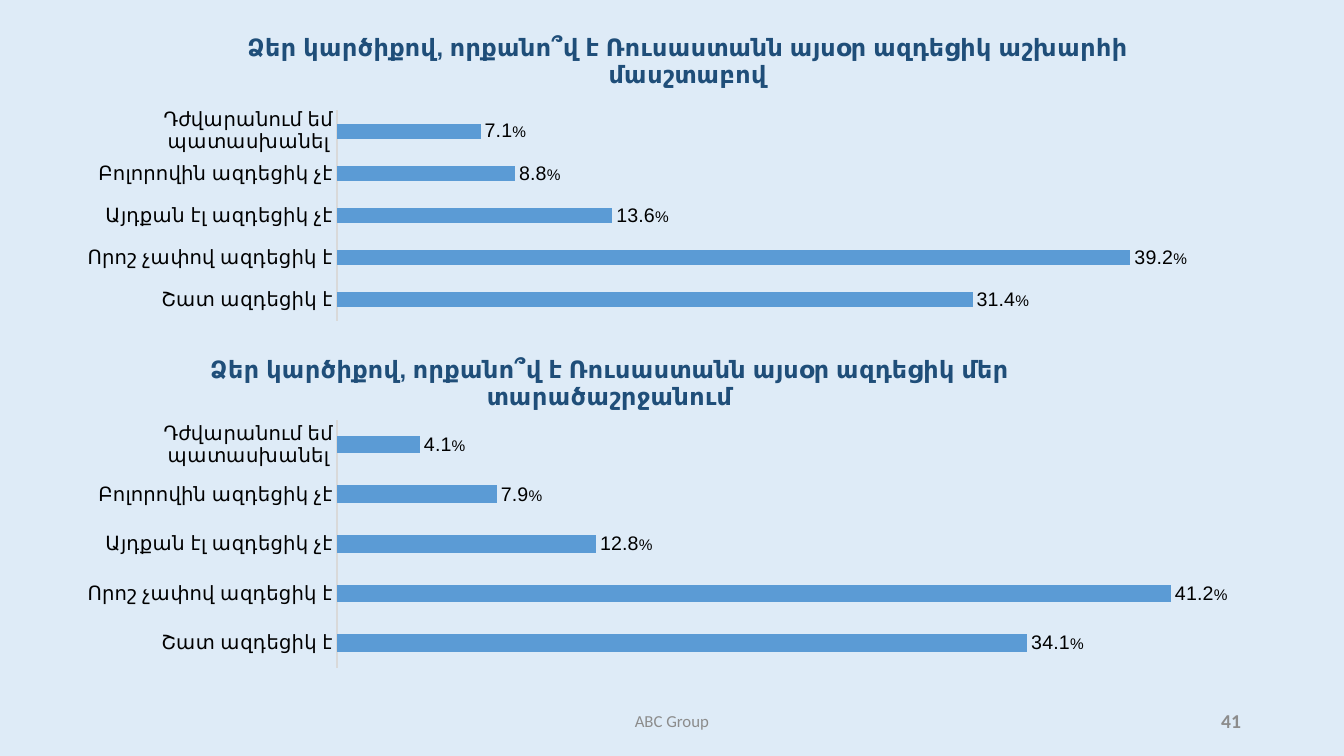
from lxml import etree
from pptx import Presentation
from pptx.chart.data import CategoryChartData
from pptx.dml.color import RGBColor
from pptx.enum.chart import XL_CHART_TYPE, XL_LABEL_POSITION, XL_TICK_LABEL_POSITION, XL_TICK_MARK
from pptx.enum.text import MSO_ANCHOR, PP_ALIGN
from pptx.oxml.ns import qn
from pptx.util import Emu, Pt

BAR = XL_CHART_TYPE.BAR_CLUSTERED
OUTSIDE_END = XL_LABEL_POSITION.OUTSIDE_END
NEXT_TO_AXIS = XL_TICK_LABEL_POSITION.NEXT_TO_AXIS
NO_TICK = XL_TICK_MARK.NONE
MIDDLE = MSO_ANCHOR.MIDDLE
CENTER, RIGHT = PP_ALIGN.CENTER, PP_ALIGN.RIGHT

PX = 9144000 / 1008  # EMU per px at 100.8 px to the inch
PALE_BLUE = RGBColor(0xDE, 0xEB, 0xF7)
BLUE = RGBColor(0x5B, 0x9B, 0xD5)
NAVY = RGBColor(0x1F, 0x4E, 0x79)
BLACK = RGBColor(0, 0, 0)
GREY = RGBColor(0x8C, 0x8C, 0x8C)
LIGHT_GREY = RGBColor(0xD9, 0xD9, 0xD9)

ONE_DECIMAL = "###0.0"
ANSWERS = ["Շատ ազդեցիկ է", "Որոշ չափով ազդեցիկ է", "Այդքան էլ ազդեցիկ չէ",
           "Բոլորովին ազդեցիկ չէ", "Դժվարանում եմ պատասխանել"]
QUESTION = "Ձեր կարծիքով, որքանո՞վ է Ռուսաստանն այսօր ազդեցիկ "


def px(n):
    return Emu(round(n * PX))


def style(font, size, color, name="Arial", bold=False):
    font.size, font.name, font.bold = Pt(size), name, bold
    font.color.rgb = color


def set_layout(parent, index, **values):
    """Place a chart part by fractions of the chart's box."""
    old = parent.find(qn("c:layout"))
    if old is not None:
        parent.remove(old)
    layout = etree.Element(qn("c:layout"))
    manual = etree.SubElement(layout, qn("c:manualLayout"))
    for tag, value in values.items():
        etree.SubElement(manual, qn("c:" + tag)).set("val", str(value))
    parent.insert(index, layout)


def add_question_chart(slide, box, title, title_at, plot, values):
    """Bar chart in box; title_at and plot are px offsets from its corner."""
    x, y, w, h = box
    data = CategoryChartData(number_format=ONE_DECIMAL)
    data.categories = ANSWERS
    data.add_series("Series 1", values)
    chart = slide.shapes.add_chart(BAR, px(x), px(y), px(w), px(h), data).chart
    chart.has_legend = False
    style(chart.font, 14, BLACK)

    # Title
    p = chart.chart_title.text_frame.paragraphs[0]
    r = p.add_run()
    r.text = title
    style(r.font, 17, NAVY, bold=True)
    chart.chart_title.include_in_layout = False
    set_layout(chart.chart_title._element, 1, xMode="edge", yMode="edge",
               x=round(title_at[0] / w, 4), y=round(title_at[1] / h, 4))

    # Plot area and axes
    plot_x, plot_y, plot_w, plot_h = plot
    set_layout(chart._chartSpace.chart.plotArea, 0, layoutTarget="inner",
               xMode="edge", yMode="edge",
               x=round(plot_x / w, 4), y=round(plot_y / h, 4),
               w=round(plot_w / w, 4), h=round(plot_h / h, 4))
    cat = chart.category_axis
    cat.major_tick_mark = cat.minor_tick_mark = NO_TICK
    cat.tick_label_position = NEXT_TO_AXIS
    cat.format.line.color.rgb = LIGHT_GREY
    cat.format.line.width = Pt(0.75)
    style(cat.tick_labels.font, 14, BLACK)
    val = chart.value_axis
    val.minimum_scale, val.maximum_scale = 0, 45
    val.has_major_gridlines = False
    val.major_tick_mark = val.minor_tick_mark = NO_TICK
    val.tick_labels.number_format = ONE_DECIMAL
    val.tick_labels.number_format_is_linked = False
    val.visible = False

    # Bars
    bars = chart.plots[0]
    bars.gap_width = 182
    bars.vary_by_categories = False
    series = bars.series[0]
    series.format.fill.solid()
    series.format.fill.fore_color.rgb = BLUE

    # Value labels with a smaller percent sign
    labels = series.data_labels
    labels.show_value = True
    labels.number_format = ONE_DECIMAL
    labels.number_format_is_linked = False
    labels.position = OUTSIDE_END
    style(labels.font, 14, BLACK)
    for i, value in enumerate(values):
        label = series.points[i].data_label
        p = label.text_frame.paragraphs[0]
        for text, size in ((f"{value:.1f}", 14), ("%", 11)):
            r = p.add_run()
            r.text = text
            style(r.font, size, BLACK)
        label.position = OUTSIDE_END


def add_footer_text(slide, box, text, size, align, bold=False):
    tf = slide.shapes.add_textbox(*map(px, box)).text_frame
    tf.word_wrap = True
    tf.vertical_anchor = MIDDLE
    p = tf.paragraphs[0]
    p.alignment = align
    r = p.add_run()
    r.text = text
    style(r.font, size, GREY, "Calibri", bold)


def main():
    prs = Presentation()
    prs.slide_width, prs.slide_height = px(1344), px(756)
    slide = prs.slides.add_slide(prs.slide_layouts[6])
    slide.background.fill.solid()
    slide.background.fill.fore_color.rgb = PALE_BLUE

    # Slide number
    add_footer_text(slide, (949, 701, 302, 40), "41", 14, RIGHT, bold=True)

    # Region and world questions
    add_question_chart(slide, (62, 340, 1210, 335), QUESTION + "մեր տարածաշրջանում",
                       (144, 9), (275, 80, 911, 248), [34.1, 41.2, 12.8, 7.9, 4.1])
    add_question_chart(slide, (62, 25, 1210, 302), QUESTION + "աշխարհի մասշտաբով",
                       (181, 2), (275, 85, 911, 211), [31.4, 39.2, 13.6, 8.8, 7.1])

    # Footer
    add_footer_text(slide, (445, 701, 454, 40), "ABC Group", 12, CENTER)
    prs.save("out.pptx")


if __name__ == "__main__":
    main()
